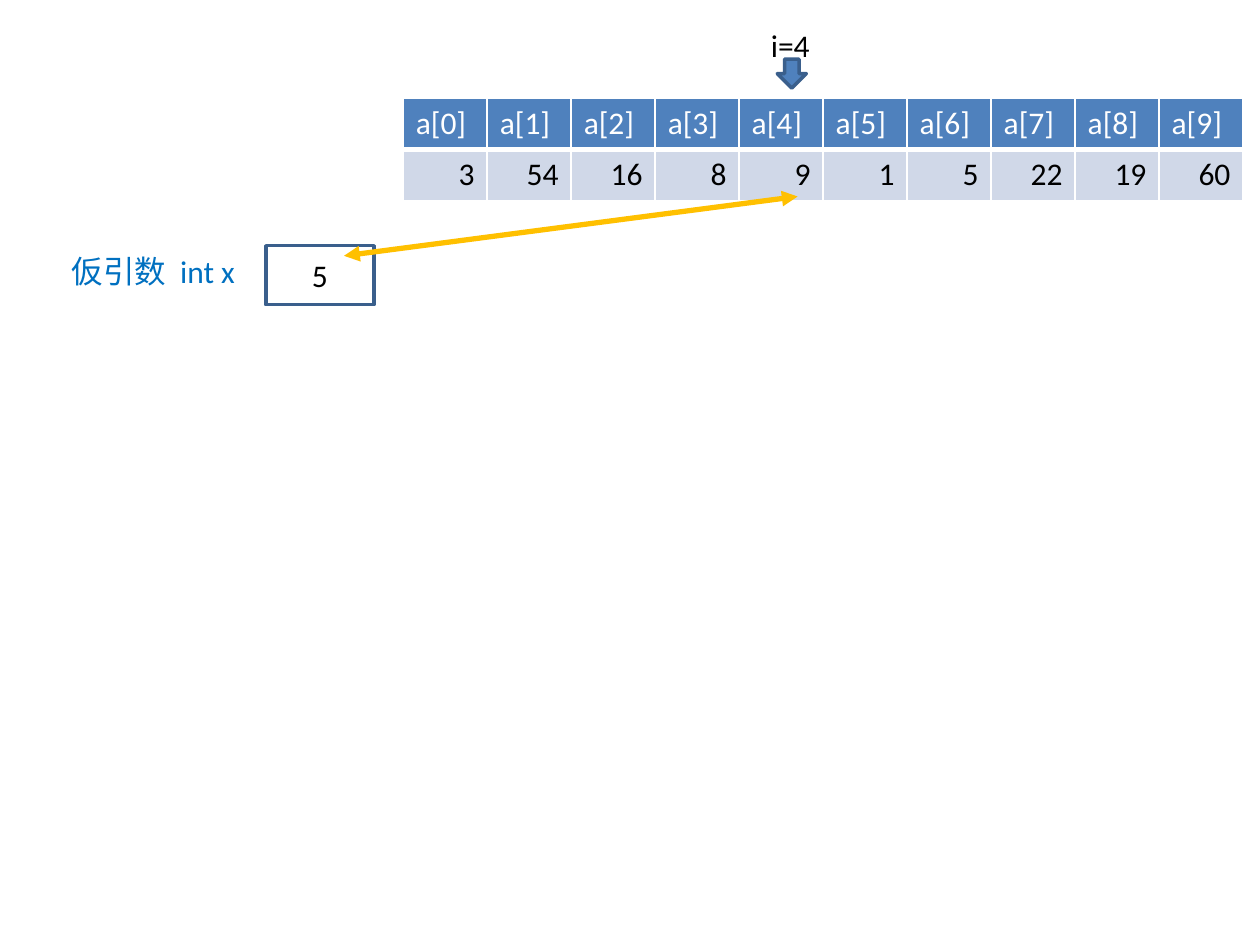
"""Build a slide showing a ten-element array, its index marker and the parameter x."""
import pptx
import pptx.util
import pptx.dml.color
import pptx.enum.shapes
import pptx.enum.text
import pptx.oxml
import pptx.oxml.ns

Pt = pptx.util.Pt
Align = pptx.enum.text.PP_ALIGN
Anchor = pptx.enum.text.MSO_ANCHOR
Shape = pptx.enum.shapes.MSO_SHAPE
qn = pptx.oxml.ns.qn

VALUES = [3, 54, 16, 8, 9, 1, 5, 22, 19, 60]
INDEX_LABEL = "i=4"
PARAMETER_LABEL = "仮引数  int x"
PARAMETER_VALUE = "5"

COLORS = {
    "blue": "4F81BD",
    "outline": "3A5F8C",
    "band": "D0D8E8",
    "label": "0070C0",
    "arrow": "FFC000",
    "white": "FFFFFF",
    "black": "000000",
}
FONT, FONT_SIZE = "Calibri", 18
TABLE_LEFT, TABLE_TOP, COLUMN_WIDTH, ROW_HEIGHT = 230.4, 56.2, 48, 29.2
INDEX_BOX = (433.4, 11.5, 36.7, 29.1)
INDEX_ARROW = (444.2, 33.8, 16.6, 16.6)
LABEL_BOX = (33.8, 140.4, 108.7, 29.1)
VALUE_BOX = (151.9, 140.4, 61.9, 33.8)
COMPARE_LINE = (455.8, 112.3, 196.6, 146.2)


def rgb(name):
    return pptx.dml.color.RGBColor.from_string(COLORS[name])


def points(lengths):
    return [Pt(length) for length in lengths]


def write(text_frame, text, color, align=Align.LEFT):
    paragraph = text_frame.paragraphs[0]
    paragraph.text = text
    paragraph.alignment = align
    paragraph.font.name = FONT
    paragraph.font.size = Pt(FONT_SIZE)
    paragraph.font.color.rgb = rgb(color)


def add_shape(slide, kind, box, fill, line=None):
    shape = slide.shapes.add_shape(kind, *points(box))
    shape.shadow.inherit = False
    shape.fill.solid()
    shape.fill.fore_color.rgb = rgb(fill)
    if line:
        shape.line.color.rgb = rgb(line)
        shape.line.width = Pt(2)
    else:
        shape.line.fill.background()
    return shape


def add_borders(cell, bottom_width):
    properties = cell._tc.get_or_add_tcPr()
    for side, width in (("L", 1), ("R", 1), ("T", 1), ("B", bottom_width)):
        properties.append(pptx.oxml.parse_xml(
            f'<a:ln{side} {pptx.oxml.ns.nsdecls("a")} w="{Pt(width)}"><a:solidFill>'
            f'<a:srgbClr val="{COLORS["white"]}"/></a:solidFill></a:ln{side}>'
        ))


def add_array(slide):
    count = len(VALUES)
    rows = [
        ([f"a[{index}]" for index in range(count)], "blue", "white", Align.LEFT, 3),
        ([str(value) for value in VALUES], "band", "black", Align.RIGHT, 1),
    ]
    box = (TABLE_LEFT, TABLE_TOP, COLUMN_WIDTH * count, ROW_HEIGHT * len(rows))
    table = slide.shapes.add_table(len(rows), count, *points(box)).table
    for row_index, (texts, fill, color, align, bottom_width) in enumerate(rows):
        for column_index, text in enumerate(texts):
            cell = table.cell(row_index, column_index)
            add_borders(cell, bottom_width)
            cell.fill.solid()
            cell.fill.fore_color.rgb = rgb(fill)
            write(cell.text_frame, text, color, align)
            cell.text_frame.paragraphs[0].font.bold = False


def add_double_arrow(slide):
    connector = slide.shapes.add_connector(
        pptx.enum.shapes.MSO_CONNECTOR.STRAIGHT, *points(COMPARE_LINE))
    connector.line.color.rgb = rgb("arrow")
    connector.line.width = Pt(3)
    line = connector.line._get_or_add_ln()
    for end in ("a:headEnd", "a:tailEnd"):
        line.append(line.makeelement(qn(end), {"type": "triangle"}))
    properties = connector._element.spPr
    properties.append(properties.makeelement(qn("a:effectLst"), {}))


def main():
    presentation = pptx.Presentation()
    presentation.slide_width, presentation.slide_height = Pt(720), Pt(540)
    slide = presentation.slides.add_slide(presentation.slide_layouts[6])

    add_array(slide)
    value_box = add_shape(slide, Shape.RECTANGLE, VALUE_BOX, "white", "outline")
    write(value_box.text_frame, PARAMETER_VALUE, "black", Align.CENTER)

    label_box = add_shape(slide, Shape.RECTANGLE, LABEL_BOX, "white")
    label_box.text_frame.word_wrap = True
    label_box.text_frame.vertical_anchor = Anchor.TOP
    write(label_box.text_frame, PARAMETER_LABEL, "label")

    add_shape(slide, Shape.DOWN_ARROW, INDEX_ARROW, "blue", "outline")
    add_double_arrow(slide)
    index_box = slide.shapes.add_textbox(*points(INDEX_BOX))
    index_box.text_frame.word_wrap = False
    write(index_box.text_frame, INDEX_LABEL, "black")

    presentation.save("out.pptx")


if __name__ == "__main__":
    main()
